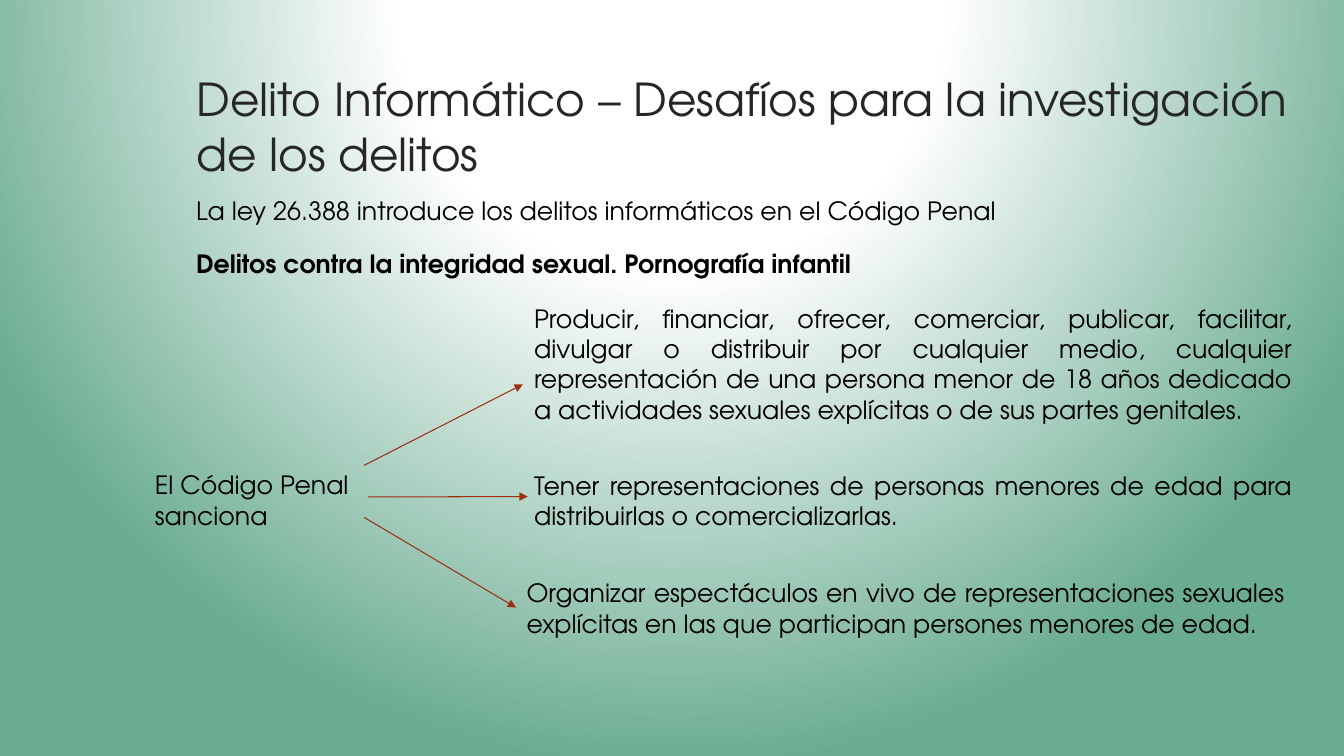
from pptx import Presentation
from pptx.dml.color import RGBColor
from pptx.enum import shapes, text
from pptx.oxml import parse_xml
from pptx.oxml.ns import nsdecls, qn
from pptx.util import Pt

COLORS = {"title": "262626", "body": "000000", "arrow": "9E2E0F",
          "center": "FFFFFF", "edge": "6AAC91"}
FONT = "TeX Gyre Adventor"


def set_text(sp, content, size, color, align=text.PP_ALIGN.LEFT, bold=False):
    tf = sp.text_frame
    tf.text = content
    p = tf.paragraphs[0]
    p.alignment = align
    r = p.runs[0]
    r.font.name = FONT
    r.font.size = Pt(size)
    r.font.bold = bold
    r.font.color.rgb = RGBColor.from_string(COLORS[color])
    return tf


prs = Presentation()
prs.slide_width, prs.slide_height = Pt(960), Pt(540)
s = prs.slides.add_slide(prs.slide_layouts[5])

s.background.fill.gradient()
grad = s._element.find(".//" + qn("a:gradFill"))
stops = "".join(
    f'<a:gs pos="{pos * 1000}"><a:srgbClr val="{COLORS[name]}"/></a:gs>'
    for pos, name in [(0, "center"), (35, "center"), (100, "edge")])
grad.getparent().replace(grad, parse_xml(
    f'<a:gradFill {nsdecls("a")} rotWithShape="1"><a:gsLst>{stops}</a:gsLst>'
    '<a:path path="circle">'
    '<a:fillToRect l="50000" t="-80000" r="50000" b="180000"/>'
    '</a:path></a:gradFill>'))

title = s.shapes.title
title.left, title.top, title.width, title.height = Pt(133), Pt(49), Pt(805), Pt(82)
tf = set_text(title, "Delito Informático – Desafíos para la investigación de los delitos",
              32.4, "title")
tf.auto_size = text.MSO_AUTO_SIZE.NONE
tf.vertical_anchor = text.MSO_ANCHOR.MIDDLE

LEFT, JUSTIFY = text.PP_ALIGN.LEFT, text.PP_ALIGN.JUSTIFY
boxes = [
    (133, 136, 594, 51, LEFT, False, False,
     "La ley 26.388 introduce los delitos informáticos en el Código Penal"),
    (133, 173.5, 487.5, 51, LEFT, True, False,
     "Delitos contra la integridad sexual. Pornografía infantil"),
    (374.4, 213, 555.5, 94.5, JUSTIFY, False, True,
     "Producir, financiar, ofrecer, comerciar, publicar, facilitar, divulgar o "
     "distribuir por cualquier medio, cualquier representación de una persona menor "
     "de 18 años dedicado a actividades sexuales explícitas o de sus partes genitales."),
    (374.4, 332.5, 555.5, 51, JUSTIFY, False, True,
     "Tener representaciones de personas menores de edad para distribuirlas o "
     "comercializarlas."),
    (369, 409, 555.5, 51, JUSTIFY, False, True,
     "Organizar espectáculos en vivo de representaciones sexuales explícitas en las "
     "que participan persones menores de edad."),
    (103.5, 332, 198, 51, LEFT, False, True, "El Código Penal sanciona"),
]
for left, top, width, height, align, bold, wrap, content in boxes:
    sp = s.shapes.add_textbox(Pt(left), Pt(top), Pt(width), Pt(height))
    tf = set_text(sp, content, 18, "body", align, bold)
    tf.word_wrap = wrap
    tf.auto_size = text.MSO_AUTO_SIZE.SHAPE_TO_FIT_TEXT

arrows = [(263, 355, 377, 354.7), (260, 369.5, 368.6, 434), (260, 332.5, 373.5, 274.5)]
for x1, y1, x2, y2 in arrows:
    arrow = s.shapes.add_connector(shapes.MSO_CONNECTOR.STRAIGHT,
                                   Pt(x1), Pt(y1), Pt(x2), Pt(y2))
    arrow.line.color.rgb = RGBColor.from_string(COLORS["arrow"])
    arrow.line.width = Pt(0.75)
    arrow.line._get_or_add_ln().append(
        parse_xml(f'<a:tailEnd {nsdecls("a")} type="triangle"/>'))
    arrow._element.spPr.append(parse_xml(f'<a:effectLst {nsdecls("a")}/>'))

prs.save("out.pptx")
